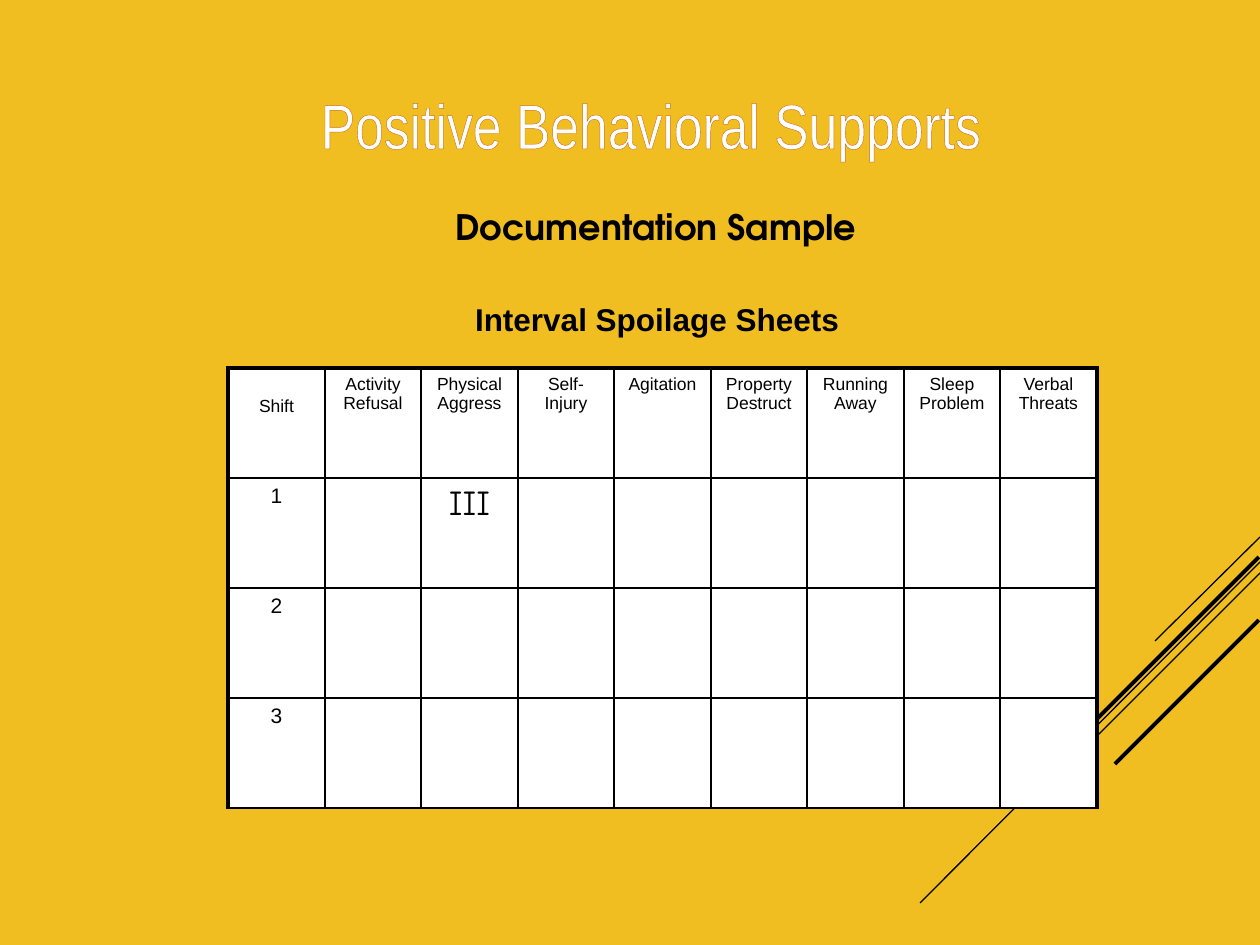
from dataclasses import dataclass

from lxml.etree import SubElement
from pptx import Presentation
from pptx.dml.color import RGBColor
from pptx.enum.shapes import MSO_CONNECTOR
from pptx.enum.text import PP_ALIGN
from pptx.oxml.ns import qn
from pptx.util import Emu, Pt


@dataclass(frozen=True)
class Theme:
    background: str = "F0BE21"
    ink: str = "000000"
    paper: str = "FFFFFF"
    title_edge: str = "D06F1E"
    title_font: str = "Arial Narrow"
    subtitle_font: str = "TeX Gyre Adventor"
    body_font: str = "Arial"
    tally_font: str = "Comic Neue"
    title_size: int = 36
    subtitle_size: int = 20
    caption_size: int = 18
    header_size: int = 10
    shift_size: int = 12
    tally_size: int = 20
    thin: float = 0.75
    grid: float = 1
    thick: float = 2.25
    title_edge_width: float = 1.5


THEME = Theme()
HEADERS = ["Shift", "Activity Refusal", "Physical Aggress", "Self- Injury", "Agitation",
           "Property Destruct", "Running Away", "Sleep Problem", "Verbal Threats"]
SHIFTS = ["1", "2", "3"]
TALLIES = {(1, 2): "III"}
STRIPES = [
    (1260, 537, 1155, 641, THEME.thin),
    (1260, 562, 920, 903, THEME.thin),
    (1260, 573, 1043, 790, THEME.thin),
    (1259, 557, 1061, 755, THEME.thick),
    (1259, 620, 1115, 764, THEME.thick),
]


def px(length):
    return Emu(round(length * 914400 / 126))


def rgb(color):
    return RGBColor.from_string(color)


def style_paragraph(para, font, size, color=THEME.ink, bold=False):
    para.alignment = PP_ALIGN.CENTER
    para.font.name = font
    para.font.size = Pt(size)
    para.font.color.rgb = rgb(color)
    para.font.bold = bold


def insert_line(properties, index, tag, width, color):
    line = properties.makeelement(qn(tag), {"w": str(Pt(width))})
    fill = SubElement(line, qn("a:solidFill"))
    SubElement(fill, qn("a:srgbClr"), val=color)
    properties.insert(index, line)


def add_stripe(page, x1, y1, x2, y2, width):
    stripe = page.shapes.add_connector(
        MSO_CONNECTOR.STRAIGHT, px(x1), px(y1), px(x2), px(y2))
    stripe.line.color.rgb = rgb(THEME.ink)
    stripe.line.width = Pt(width)
    SubElement(stripe._element.spPr, qn("a:effectLst"))


def add_text(page, text, left, top, width, height, font, size, **style):
    box = page.shapes.add_textbox(px(left), px(top), px(width), px(height))
    box.text_frame.word_wrap = True
    para = box.text_frame.paragraphs[0]
    para.text = text
    style_paragraph(para, font, size, **style)
    return box


def add_title(page):
    box = add_text(page, "Positive Behavioral Supports", 221, 73, 860, 127,
                   THEME.title_font, THEME.title_size, color=THEME.paper)
    box.text_frame.margin_top = px(13)
    span = box.text_frame.paragraphs[0].runs[0]
    insert_line(span._r.get_or_add_rPr(), 0, "a:ln",
                THEME.title_edge_width, THEME.title_edge)


def set_borders(cell, widths):
    properties = cell._tc.get_or_add_tcPr()
    for index, (side, width) in enumerate(widths.items()):
        insert_line(properties, index, f"a:ln{side}", width, THEME.ink)


def cell_content(row, column):
    if row == 0:
        return HEADERS[column], THEME.body_font, THEME.header_size
    if column == 0:
        return SHIFTS[row - 1], THEME.body_font, THEME.shift_size
    return TALLIES.get((row, column), ""), THEME.tally_font, THEME.tally_size


def add_tally_table(page):
    row_count, column_count = len(SHIFTS) + 1, len(HEADERS)
    table = page.shapes.add_table(
        row_count, column_count, px(228), px(368), px(868), px(440)).table
    for index, column in enumerate(table.columns):
        column.width = px(96 if index % 2 else 97)
    for row in range(row_count):
        table.rows[row].height = px(110)
        for column in range(column_count):
            cell = table.cell(row, column)
            cell.fill.solid()
            cell.fill.fore_color.rgb = rgb(THEME.paper)
            set_borders(cell, {
                "L": THEME.thick if column == 0 else THEME.grid,
                "R": THEME.thick if column == column_count - 1 else THEME.grid,
                "T": THEME.thick if row == 0 else THEME.grid,
                "B": THEME.grid,
            })
            text, font, size = cell_content(row, column)
            para = cell.text_frame.paragraphs[0]
            para.text = text
            style_paragraph(para, font, size)
    table.cell(0, 0).margin_top = px(29)


def main():
    deck = Presentation()
    deck.slide_width, deck.slide_height = px(1260), px(945)
    page = deck.slides.add_slide(deck.slide_layouts[6])
    page.background.fill.solid()
    page.background.fill.fore_color.rgb = rgb(THEME.background)
    for stripe in STRIPES:
        add_stripe(page, *stripe)
    add_text(page, "Documentation Sample", 84, 199, 1144, 54,
             THEME.subtitle_font, THEME.subtitle_size, bold=True)
    add_text(page, "Interval Spoilage Sheets ", 126, 294, 1071, 50,
             THEME.body_font, THEME.caption_size, bold=True)
    add_tally_table(page)
    add_title(page)
    deck.save("out.pptx")


if __name__ == "__main__":
    main()
